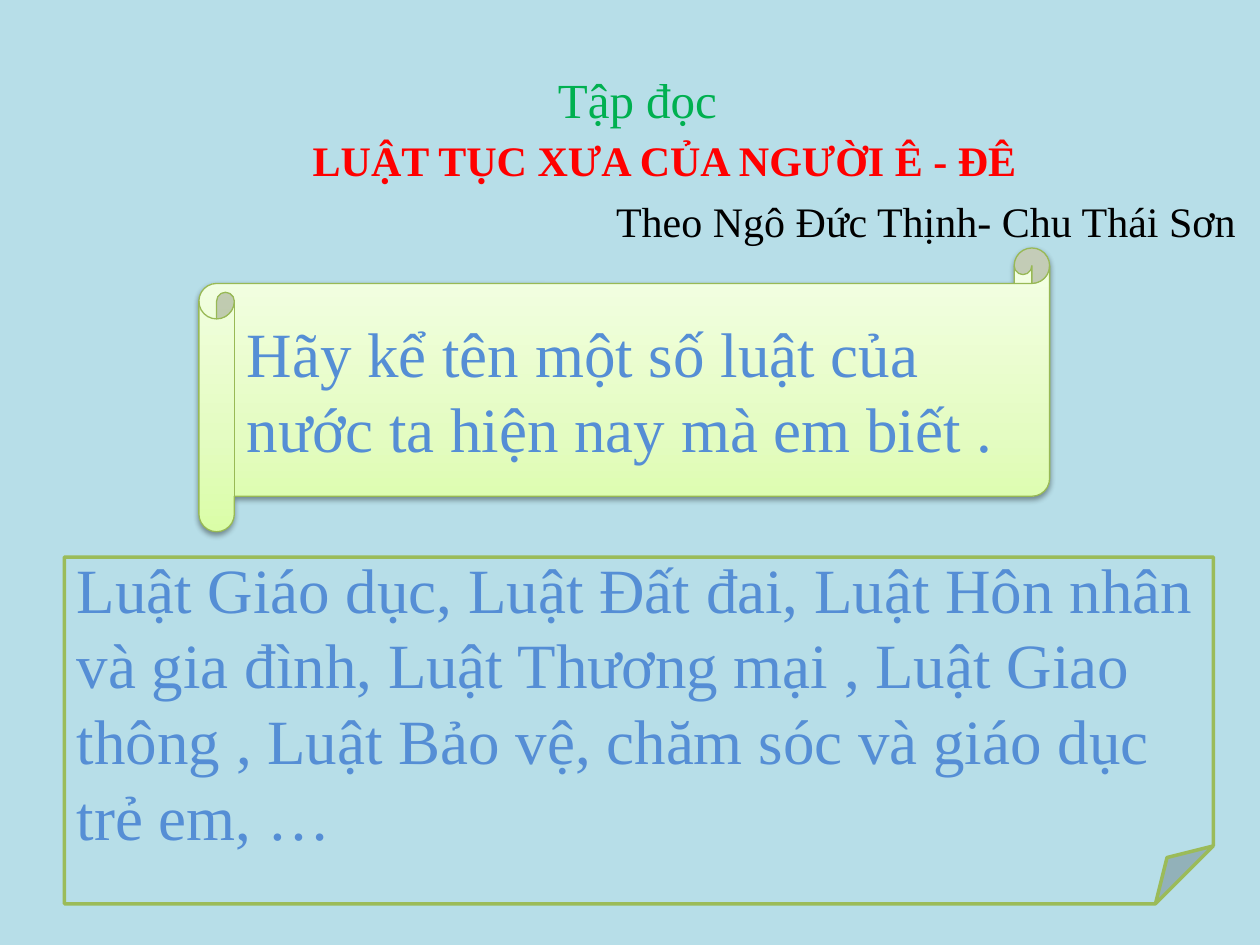
from copy import deepcopy

from lxml import etree
from pptx import Presentation
from pptx import util as u
from pptx.dml.color import RGBColor
from pptx.enum import shapes, text
from pptx.oxml.ns import qn

COLORS = {
    "sky": "B7DEE8", "blue": "558ED5", "green": "00B050", "red": "FF0000",
    "black": "000000", "olive": "9BBB59", "scroll_line": "98B955",
}
SCROLL_STOPS = [(0, "DAFDA7"), (0.35, "E4FCC2"), (1, "F5FFE7")]


class LessonSlide:
    font = "Times New Roman"

    def __init__(self, slide):
        self.slide = slide
        fill = slide.background.fill
        fill.solid()
        fill.fore_color.rgb = self.color("sky")

    def color(self, name):
        return RGBColor.from_string(COLORS[name])

    def box(self, left, top, width, height):
        return [u.Cm(length) for length in (left, top, width, height)]

    def add_words(self, paragraph, words, size, color, bold=False, align=text.PP_ALIGN.LEFT):
        paragraph.alignment = align
        run = paragraph.add_run()
        run.text = words
        formats = {"name": self.font, "size": u.Pt(size), "bold": bold}
        for key, value in formats.items():
            setattr(run.font, key, value)
        run.font.color.rgb = self.color(color)

    def frame(self, shape, **formats):
        for key, value in formats.items():
            setattr(shape.text_frame, key, value)
        return shape.text_frame

    def title(self, box, topic, name, indent):
        title = self.slide.shapes.title
        title.left, title.top, title.width, title.height = self.box(*box)
        frame = self.frame(title, word_wrap=True, auto_size=text.MSO_AUTO_SIZE.NONE,
                           vertical_anchor=text.MSO_ANCHOR.TOP)
        self.add_words(frame.paragraphs[0], topic, 28, "green", align=text.PP_ALIGN.CENTER)
        paragraph = frame.add_paragraph()
        paragraph.space_before = u.Pt(3.5)
        self.add_words(paragraph, name, 24, "red", bold=True)
        paragraph._p.get_or_add_pPr().set("marL", str(u.Cm(indent)))

    def label(self, box, words):
        label = self.slide.shapes.add_textbox(*self.box(*box))
        frame = self.frame(label, word_wrap=False,
                           auto_size=text.MSO_AUTO_SIZE.SHAPE_TO_FIT_TEXT)
        self.add_words(frame.paragraphs[0], words, 24, "black")

    def panel(self, kind, box, words, line, width):
        panel = self.slide.shapes.add_shape(kind, *self.box(*box))
        panel.shadow.inherit = False
        panel.fill.solid()
        panel.fill.fore_color.rgb = self.color("sky")
        panel.line.color.rgb = self.color(line)
        panel.line.width = u.Pt(width)
        frame = self.frame(panel, word_wrap=True, vertical_anchor=text.MSO_ANCHOR.MIDDLE)
        self.add_words(frame.paragraphs[0], words, 36, "blue")
        return panel

    def gradient(self, shape, stops, angle):
        fill = shape.fill
        fill.gradient()
        fill.gradient_angle = angle
        stop_list = shape._element.spPr.find(".//" + qn("a:gsLst"))
        while len(stop_list) < len(stops):
            stop_list.append(deepcopy(stop_list[0]))
        for stop, (position, color) in zip(fill.gradient_stops, stops):
            stop.position = position
            stop.color.rgb = RGBColor.from_string(color)

    def drop_shadow(self, shape, blur, distance, opacity):
        effects = shape._element.spPr.find(qn("a:effectLst"))
        shadow = etree.SubElement(effects, qn("a:outerShdw"), blurRad=str(u.Pt(blur)),
                                  dist=str(u.Pt(distance)), dir="5400000", rotWithShape="0")
        color = etree.SubElement(shadow, qn("a:srgbClr"), val=COLORS["black"])
        etree.SubElement(color, qn("a:alpha"), val=str(opacity * 1000))


def main():
    presentation = Presentation()
    presentation.slide_width, presentation.slide_height = u.Cm(25.4), u.Cm(19.05)
    lesson = LessonSlide(presentation.slides.add_slide(presentation.slide_layouts[5]))

    lesson.title((2.84, 1.27, 20.02, 2.64), "Tập đọc", "LUẬT TỤC XƯA CỦA NGƯỜI Ê - ĐÊ", 3.21)
    question = lesson.panel(
        shapes.MSO_SHAPE.HORIZONTAL_SCROLL, (4.01, 5, 17.15, 5.72),
        "Hãy kể tên một số luật của nước ta hiện nay mà em biết .", "scroll_line", 0.75)
    lesson.gradient(question, SCROLL_STOPS, 90)
    lesson.drop_shadow(question, 3.1, 1.6, 38)
    lesson.panel(
        shapes.MSO_SHAPE.FOLDED_CORNER, (1.3, 11.23, 23.16, 6.99),
        "Luật Giáo dục, Luật Đất đai, Luật Hôn nhân và gia đình, Luật Thương mại , "
        "Luật Giao thông , Luật Bảo vệ, chăm sóc và giáo dục trẻ em, …", "olive", 2)
    lesson.label((12.17, 3.81, 13.13, 1.27), "Theo Ngô Đức Thịnh- Chu Thái Sơn")

    presentation.save("out.pptx")


if __name__ == "__main__":
    main()
